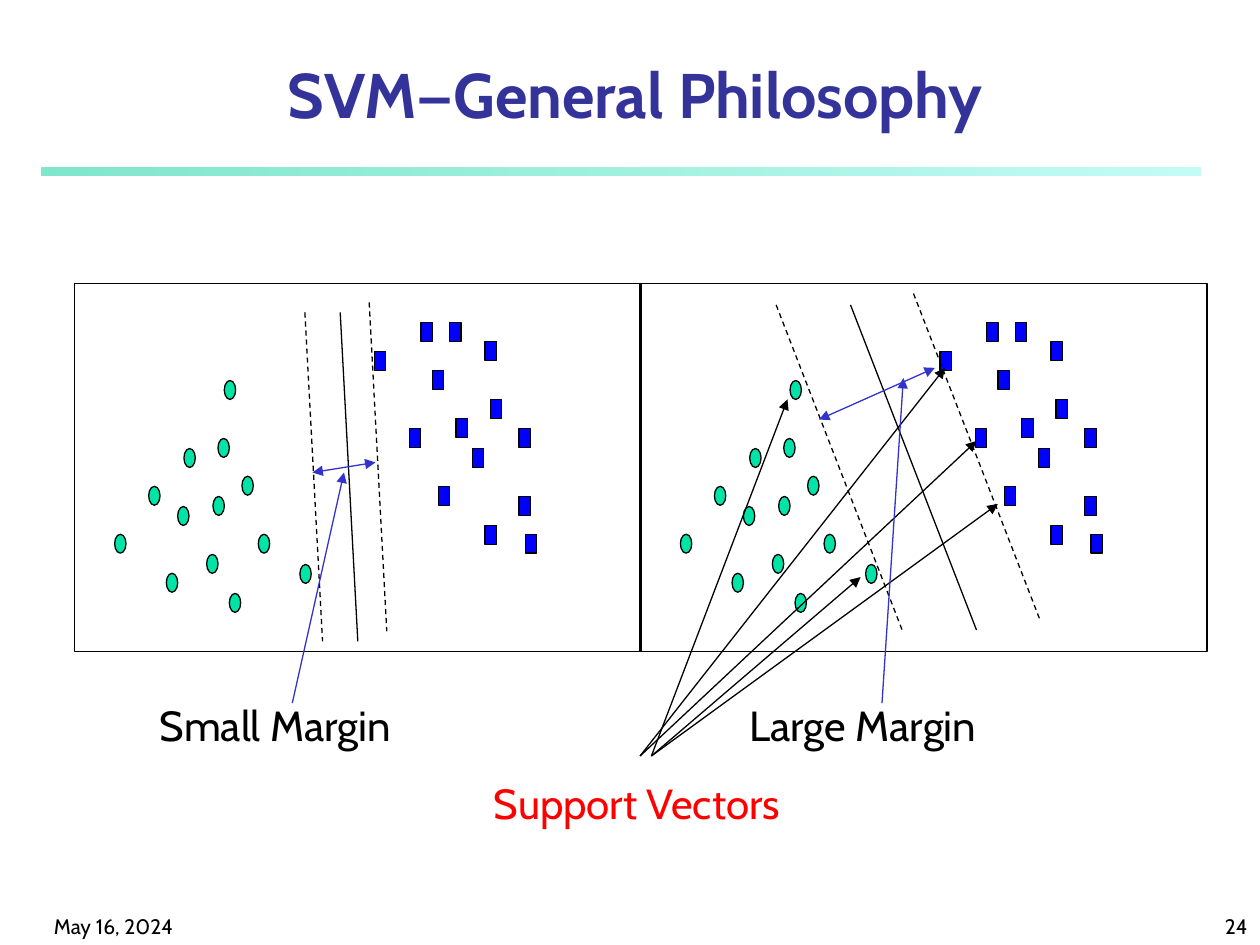
from pptx import Presentation
from pptx import util as u
from pptx.dml.color import RGBColor
from pptx.enum import dml, shapes, text
from pptx.oxml.ns import qn
from lxml import etree

FONT = "Cabin"
BLACK, BLUE, RED, NAVY = "000000", "3333CC", "FF0000", "333399"
MARK_SIZE = (0.09, 0.15)
PANEL_TOP, PANEL_SIZE = 2.25, (4.5, 2.92)

# Data points, measured from the top left corner of a panel
CLASSES = [
    (shapes.MSO_SHAPE.OVAL, "00E4A8", [
        (0.73, 2.30), (0.82, 1.77), (0.32, 1.99), (0.59, 1.61), (1.05, 2.15),
        (0.87, 1.31), (1.10, 1.69), (1.14, 1.23), (1.33, 1.53), (1.46, 1.99),
        (1.23, 2.46), (1.79, 2.23), (1.19, 0.77)]),
    (shapes.MSO_SHAPE.RECTANGLE, "0000FF", [
        (2.66, 1.15), (2.38, 0.54), (2.75, 0.31), (2.89, 1.61), (2.84, 0.69),
        (3.03, 1.07), (2.98, 0.31), (3.26, 0.46), (3.16, 1.31), (3.30, 0.92),
        (3.26, 1.92), (3.53, 1.15), (3.53, 1.69), (3.58, 1.99)]),
]

# Panel left, slope of the boundary lines, and (line start, dashed)
PANELS = [
    (0.59, (0.14, 2.61),
     [((2.93, 2.40), True), ((2.42, 2.48), True), ((2.70, 2.48), False)]),
    (5.08, (1.00, 2.58),
     [((6.16, 2.42), True), ((7.25, 2.33), True), ((6.75, 2.42), False)]),
]

# Label, box, text colour, line colour, (from, to, arrow at both ends)
CALLOUTS = [
    ("Support Vectors", (3.82, 6.12, 2.55, 0.5), RED, BLACK, [
        ((5.08, 6), (7.50, 2.92), False), ((5.08, 6), (7.75, 3.50), False),
        ((5.17, 6), (7.92, 4.00), False), ((5.17, 6), (6.83, 4.58), False),
        ((5.17, 6), (6.25, 3.17), False)]),
    ("Small Margin", (1.17, 5.5, 2.1, 0.5), BLACK, BLUE, [
        ((2.48, 3.75), (2.98, 3.67), True),
        ((2.32, 5.58), (2.73, 3.75), False)]),
    ("Large Margin", (5.85, 5.5, 2.12, 0.5), BLACK, BLUE, [
        ((6.50, 3.33), (7.42, 2.92), True),
        ((7.00, 5.58), (7.17, 3.00), False)]),
]


def rgb(color):
    return RGBColor.from_string(color)


def inches(values):
    return [u.Inches(value) for value in values]


def add_text(parent, words, box, size, color=BLACK, bold=False, wrap=True,
             align=text.PP_ALIGN.LEFT, anchor=text.MSO_ANCHOR.BOTTOM):
    frame = parent.add_textbox(*inches(box)).text_frame
    frame.text = words
    frame.word_wrap = wrap
    frame.vertical_anchor = anchor
    if not wrap:
        frame.auto_size = text.MSO_AUTO_SIZE.SHAPE_TO_FIT_TEXT
    paragraph = frame.paragraphs[0]
    paragraph.alignment = align
    font = paragraph.runs[0].font
    font.name, font.size, font.bold = FONT, u.Pt(size), bold
    font.color.rgb = rgb(color)


def add_outlined(parent, kind, box, fill=None):
    shape = parent.add_shape(kind, *inches(box))
    shape.shadow.inherit = False
    if fill:
        shape.fill.solid()
        shape.fill.fore_color.rgb = rgb(fill)
    else:
        shape.fill.background()
    shape.line.color.rgb = rgb(BLACK)
    shape.line.width = u.Pt(0.75)


def add_line(parent, start, end, color=BLACK, dashed=False, arrows=()):
    """Draw a line; arrows names its arrowhead elements, headEnd before tailEnd."""
    connector = parent.add_connector(shapes.MSO_CONNECTOR.STRAIGHT,
                                     *inches(start + end))
    connector.line.color.rgb = rgb(color)
    connector.line.width = u.Pt(0.75)
    if dashed:
        connector.line.dash_style = dml.MSO_LINE.DASH
    properties = connector._element.spPr
    for arrow in arrows:
        etree.SubElement(properties.find(qn("a:ln")), qn("a:" + arrow), type="triangle")
    etree.SubElement(properties, qn("a:effectLst"))


def add_title_rule(parent):
    rule = parent.add_shape(shapes.MSO_SHAPE.RECTANGLE,
                            *inches((0.33, 1.33, 9.2, 0.06)))
    rule.shadow.inherit = False
    rule.line.fill.background()
    rule.fill.gradient()
    rule.fill.gradient_angle = 0
    for stop, color, opacity in zip(rule.fill.gradient_stops,
                                    ("00CE98", "8FF9EF"), (50, 52)):
        stop.color.rgb = rgb(color)
    for node, opacity in zip(rule._element.spPr.iter(qn("a:srgbClr")), (50, 52)):
        etree.SubElement(node, qn("a:alpha"), val=str(opacity * 1000))


def add_panel(parent, left, slope, boundaries):
    for kind, fill, points in CLASSES:
        for x, y in points:
            add_outlined(parent, kind, (left + x, PANEL_TOP + y) + MARK_SIZE, fill)
    add_outlined(parent, shapes.MSO_SHAPE.RECTANGLE, (left, PANEL_TOP) + PANEL_SIZE)
    for start, dashed in boundaries:
        end = (start[0] + slope[0], start[1] + slope[1])
        add_line(parent, start, end, dashed=dashed)


def main():
    presentation = Presentation()
    presentation.slide_width, presentation.slide_height = inches((10, 7.5))
    slide = presentation.slides.add_slide(presentation.slide_layouts[6])

    add_title_rule(slide.shapes)
    add_text(slide.shapes, "May 16, 2024", (0.33, 7.08, 2.08, 0.42), 12)
    add_text(slide.shapes, "24", (7.92, 7.08, 2.08, 0.42), 12,
             align=text.PP_ALIGN.RIGHT)
    add_text(slide.shapes, "SVM—General Philosophy", (0.33, 0.42, 9.42, 0.67), 36,
             NAVY, bold=True, align=text.PP_ALIGN.CENTER)

    for panel in PANELS:
        add_panel(slide.shapes.add_group_shape().shapes, *panel)

    for label, box, text_color, line_color, lines in CALLOUTS:
        group = slide.shapes.add_group_shape().shapes
        add_text(group, label, box, 24, text_color, wrap=False,
                 anchor=text.MSO_ANCHOR.TOP)
        for start, end, both in lines:
            arrows = ("headEnd", "tailEnd") if both else ("tailEnd",)
            add_line(group, start, end, line_color, arrows=arrows)

    presentation.save("out.pptx")


if __name__ == "__main__":
    main()
